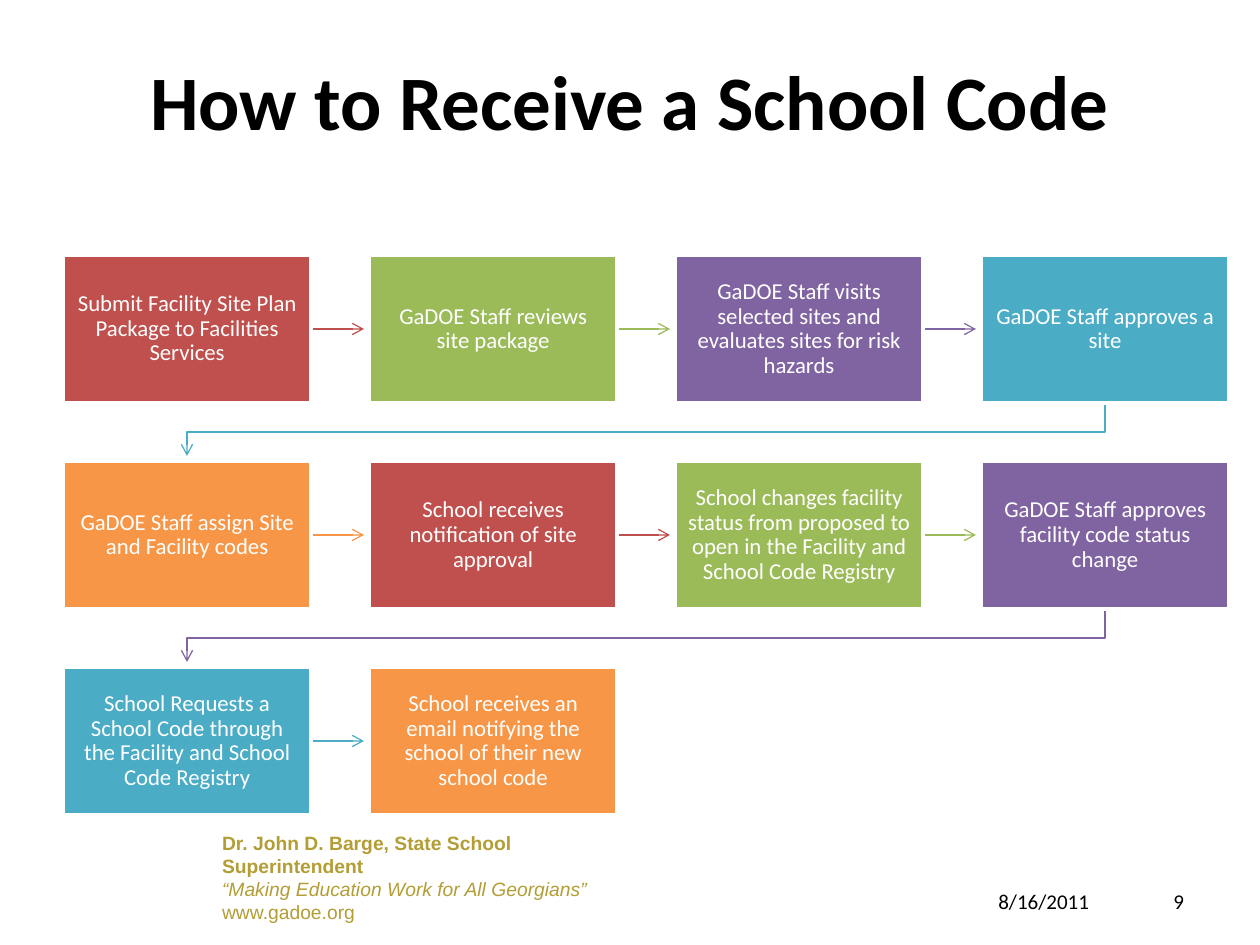
"""Build the school code process slide."""
import pptx
import pptx.dml.color
import pptx.enum.shapes
import pptx.enum.text
import pptx.oxml
import pptx.oxml.ns
import pptx.util

SCALE = 914400 / 126
COLORS = {
    "red": "C0504D", "green": "9BBB59", "purple": "8064A2", "teal": "4BACC6",
    "orange": "F79646", "white": "FFFFFF", "black": "000000", "gold": "B39D35",
}
CYCLE = ["red", "green", "purple", "teal", "orange"]
STEPS = [
    "Submit Facility Site Plan Package to Facilities Services",
    "GaDOE Staff reviews site package",
    "GaDOE Staff visits selected sites and evaluates sites for risk hazards",
    "GaDOE Staff approves a site",
    "GaDOE Staff assign Site and Facility codes",
    "School receives notification of site approval",
    "School changes facility status from proposed to open in the Facility and School Code Registry",
    "GaDOE Staff approves facility code status change",
    "School Requests a School Code through the Facility and School Code Registry",
    "School receives an email notifying the school of their new school code",
]
COLUMNS = 4
LEFT, TOP, WIDTH, HEIGHT = 63, 255, 248, 148
PITCH_X, PITCH_Y = 306, 206
ARROW_LENGTH, TURN_DROP, TURN_END = 53, 29, 53


def px(n):
    return pptx.util.Emu(round(n * SCALE))


def rgb(name):
    return pptx.dml.color.RGBColor.from_string(COLORS[name])


def write(tf, text, size=13, color="black", font="Calibri", bold=False,
          italic=False, align="LEFT", spacing=1.0):
    p = tf.add_paragraph() if tf.text else tf.paragraphs[0]
    p.alignment = getattr(pptx.enum.text.PP_ALIGN, align)
    p.line_spacing = spacing
    r = p.add_run()
    r.text = text
    r.font.size = pptx.util.Pt(size)
    r.font.name = font
    r.font.bold = bold
    r.font.italic = italic
    r.font.color.rgb = rgb(color)


class Deck:
    """Hold the style and the current slide."""

    def __init__(self):
        self.prs = pptx.Presentation()
        self.prs.slide_width, self.prs.slide_height = px(1260), px(945)
        self.s = self.prs.slides.add_slide(self.prs.slide_layouts[6])

    def frame(self, sp, inset_x, inset_y, anchor="MIDDLE"):
        tf = sp.text_frame
        tf.word_wrap = True
        tf.margin_left = tf.margin_right = px(inset_x)
        tf.margin_top = tf.margin_bottom = px(inset_y)
        tf.vertical_anchor = getattr(pptx.enum.text.MSO_ANCHOR, anchor)
        return tf

    def text_box(self, x, y, w, h, inset_x=13, inset_y=6, anchor="MIDDLE"):
        sp = self.s.shapes.add_textbox(px(x), px(y), px(w), px(h))
        return self.frame(sp, inset_x, inset_y, anchor)

    def step(self, x, y, text, color):
        sp = self.s.shapes.add_shape(pptx.enum.shapes.MSO_SHAPE.RECTANGLE,
                                     px(x), px(y), px(WIDTH), px(HEIGHT))
        sp.shadow.inherit = False
        sp.fill.solid()
        sp.fill.fore_color.rgb = rgb(color)
        sp.line.color.rgb = rgb("white")
        sp.line.width = pptx.util.Pt(2)
        write(self.frame(sp, 13, 13), text, color="white", align="CENTER", spacing=0.9)
        return sp

    def arrow_line(self, sp, color):
        sp.line.color.rgb = rgb(color)
        sp.line.width = pptx.util.Pt(0.75)
        ln = sp.element.spPr.find(pptx.oxml.ns.qn("a:ln"))
        ns = pptx.oxml.ns.nsdecls("a")
        ln.append(pptx.oxml.parse_xml(f'<a:tailEnd {ns} type="arrow"/>'))
        self.s.shapes.element.insert(2, sp.element)

    def arrow(self, source, x, y, color):
        sp = self.s.shapes.add_connector(pptx.enum.shapes.MSO_CONNECTOR.STRAIGHT,
                                         px(x), px(y), px(x + ARROW_LENGTH), px(y))
        sp.begin_connect(source, 3)
        self.arrow_line(sp, color)
        ns = pptx.oxml.ns.nsdecls("a")
        sp.element.spPr.append(pptx.oxml.parse_xml(f"<a:effectLst {ns}/>"))

    def turn(self, x, y, end_x, color):
        builder = self.s.shapes.build_freeform(x, y, scale=SCALE)
        builder.add_line_segments([(x, y + TURN_DROP), (end_x, y + TURN_DROP),
                                   (end_x, y + TURN_END)], close=False)
        sp = builder.convert_to_shape()
        sp.shadow.inherit = False
        sp.fill.background()
        self.arrow_line(sp, color)


def main():
    deck = Deck()
    tf = deck.text_box(206, 822, 457, 111, 16, 9, "TOP")
    gold = {"size": 11, "color": "gold", "font": "Arial"}
    write(tf, "Dr. John D. Barge, State School Superintendent", bold=True, **gold)
    write(tf, "“Making Education Work for All Georgians”", italic=True, **gold)
    write(tf, "www.gadoe.org", **gold)
    write(deck.text_box(63, 21, 1134, 158), "How to Receive a School Code",
          size=44, bold=True, align="CENTER")

    for i, text in enumerate(STEPS):
        row, column = divmod(i, COLUMNS)
        x, y = LEFT + column * PITCH_X, TOP + row * PITCH_Y
        color = CYCLE[i % len(CYCLE)]
        sp = deck.step(x, y, text, color)
        if i == len(STEPS) - 1:
            continue
        if column == COLUMNS - 1:
            deck.turn(x + WIDTH // 2, y + HEIGHT, LEFT + WIDTH // 2, color)
        else:
            deck.arrow(sp, x + WIDTH, y + HEIGHT // 2, color)

    write(deck.text_box(955, 876, 147, 50), "8/16/2011", size=12, align="RIGHT")
    write(deck.text_box(1113, 876, 84, 50), "9", size=12, align="RIGHT")
    deck.prs.save("out.pptx")


if __name__ == "__main__":
    main()
